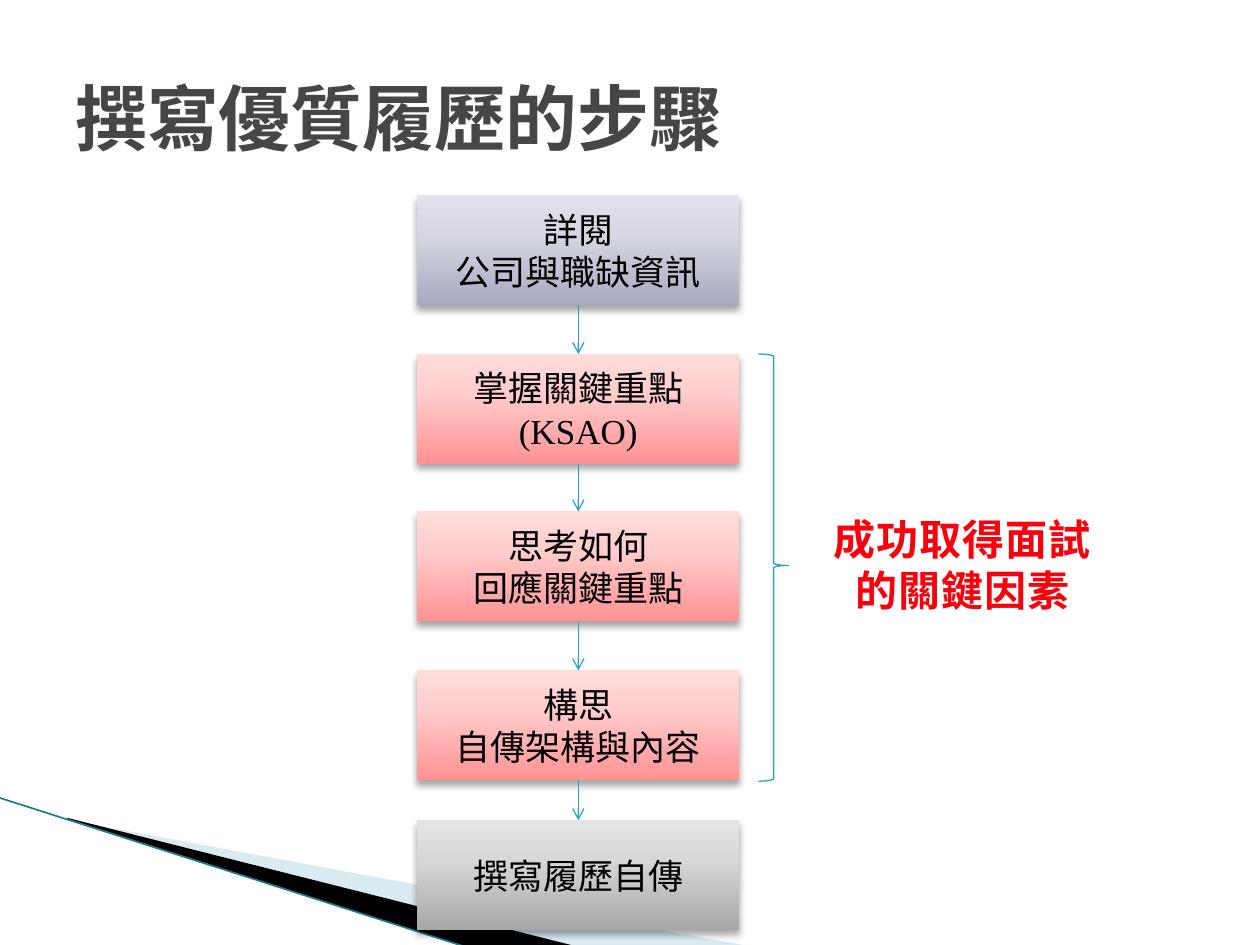
from copy import deepcopy

from pptx import Presentation
from pptx.dml.color import RGBColor
from pptx.enum.shapes import MSO_CONNECTOR as Connector, MSO_SHAPE as Shape
from pptx.enum.text import MSO_ANCHOR as Anchor, PP_ALIGN as Align
from pptx.oxml.ns import qn
from pptx.util import Inches, Pt
from lxml.etree import SubElement

COLORS = {
    "title": "464646", "text": "000000", "key": "F9000C", "line": "2DA2BF",
    "wedge": "A0CBDC", "band": "000000", "edge": "1F7A90",
}
GRADIENTS = {
    "violet": ("A8AAC0", "D6D7E3", "E2E2EC"),
    "red": ("FF9294", "FFCDCD", "FFDCDC"),
    "gray": ("A7A7A7", "D8D8D8", "E4E4E4"),
}
STOPS = (0, 0.65, 1)
SANS, SERIF = "Noto Sans CJK SC", "Times New Roman"

STEP_LEFT, STEP_WIDTH, STEP_HEIGHT = 3.31, 2.56, 0.87
STEPS = [
    (1.55, "violet", SANS, ["詳閱", "公司與職缺資訊"]),
    (2.81, "red", SERIF, ["掌握關鍵重點", "(KSAO)"]),
    (4.06, "red", SANS, ["思考如何", "回應關鍵重點"]),
    (5.32, "red", SANS, ["構思", "自傳架構與內容"]),
    (6.51, "gray", SANS, ["撰寫履歷自傳"]),
]


def rgb(name):
    return RGBColor.from_string(COLORS[name])


def write(frame, lines, size, color, font=SANS, bold=False, align=Align.CENTER, spacing=0):
    for index, line in enumerate(lines):
        para = frame.paragraphs[0] if index == 0 else frame.add_paragraph()
        para.alignment = align
        para.line_spacing = Pt(round(size * 1.21, 1))
        span = para.add_run()
        span.text = line
        span.font.size = Pt(size)
        span.font.bold = bold
        span.font.color.rgb = rgb(color)
        span.font.name = font
        props = span.font._element
        SubElement(props, qn("a:ea")).set("typeface", SANS)
        if spacing:
            props.set("spc", str(int(spacing * 100)))


def add_text(page, left, top, width, height, *args, **kwargs):
    box = page.shapes.add_textbox(Inches(left), Inches(top), Inches(width), Inches(height))
    box.text_frame.word_wrap = True
    box.text_frame.vertical_anchor = Anchor.MIDDLE
    write(box.text_frame, *args, **kwargs)


def add_polygon(page, points, color, opacity=100):
    corners = [(Inches(x), Inches(y)) for x, y in points]
    builder = page.shapes.build_freeform(*corners[0], scale=1.0)
    builder.add_line_segments(corners[1:], close=True)
    shape = builder.convert_to_shape()
    shape.shadow.inherit = False
    shape.fill.solid()
    shape.fill.fore_color.rgb = rgb(color)
    shape.line.fill.background()
    if opacity < 100:
        tint = shape._element.spPr.find(".//" + qn("a:srgbClr"))
        SubElement(tint, qn("a:alpha")).set("val", str(opacity * 1000))


def add_line(page, start, end, color, width, arrow=False):
    line = page.shapes.add_connector(
        Connector.STRAIGHT, *(Inches(value) for value in (*start, *end)))
    line.line.color.rgb = rgb(color)
    line.line.width = Pt(width)
    if arrow:
        SubElement(line.line._get_or_add_ln(), qn("a:tailEnd")).set("type", "arrow")
    SubElement(line._element.spPr, qn("a:effectLst"))


def fill_gradient(shape, colors):
    shape.fill.gradient()
    shape.fill.gradient_angle = 90
    stop_list = shape._element.spPr.find(".//" + qn("a:gsLst"))
    stop_list.append(deepcopy(stop_list[-1]))
    for stop, position, color in zip(shape.fill.gradient_stops, STOPS, colors):
        stop.position = position
        stop.color.rgb = RGBColor.from_string(color)


def add_shadow(shape):
    shape.shadow.inherit = False
    effects = shape._element.spPr.find(qn("a:effectLst"))
    shadow = SubElement(effects, qn("a:outerShdw"), blurRad=str(Pt(4)),
                        dist=str(Pt(3)), dir="5400000", rotWithShape="0")
    tint = SubElement(shadow, qn("a:srgbClr"), val=COLORS["text"])
    SubElement(tint, qn("a:alpha"), val="35000")


def add_step(page, top, gradient, font, lines):
    box = page.shapes.add_shape(Shape.RECTANGLE, Inches(STEP_LEFT), Inches(top),
                                Inches(STEP_WIDTH), Inches(STEP_HEIGHT))
    fill_gradient(box, GRADIENTS[gradient])
    box.line.fill.background()
    add_shadow(box)
    box.text_frame.word_wrap = False
    box.text_frame.vertical_anchor = Anchor.MIDDLE
    write(box.text_frame, lines, 20, "text", font)


def add_brace(page, left, top, width, height):
    brace = page.shapes.add_shape(Shape.RIGHT_BRACE, Inches(left), Inches(top),
                                  Inches(width), Inches(height))
    brace.adjustments[0], brace.adjustments[1] = 0.083, 0.495
    brace.shadow.inherit = False
    brace.fill.background()
    brace.line.color.rgb = rgb("line")
    brace.line.width = Pt(0.75)


def main():
    deck = Presentation()
    deck.slide_width, deck.slide_height = Inches(10), Inches(7.5)
    page = deck.slides.add_slide(deck.slide_layouts[6])

    # Corner decoration
    add_polygon(page, [(0.55, 6.51), (5.95, 7.51), (4.56, 7.51), (0.55, 6.5)], "wedge", 40)
    add_polygon(page, [(0.53, 6.49), (4.57, 7.51), (3.72, 7.52), (0.54, 6.5)], "band")
    add_line(page, (-0.01, 6.33), (3.71, 7.52), "edge", 0.95)

    # Title
    add_text(page, 0.5, 0.3, 9, 1.25, ["撰寫優質履歷的步驟"], 41, "title",
             bold=True, align=Align.LEFT)

    # Steps, joined by arrows
    for step in STEPS:
        add_step(page, *step)
    center = STEP_LEFT + STEP_WIDTH / 2
    for upper, lower in zip(STEPS, STEPS[1:]):
        add_line(page, (center, upper[0] + STEP_HEIGHT), (center, lower[0]),
                 "line", 0.75, arrow=True)

    # Key factor beside the three middle steps
    add_text(page, 6.42, 4.02, 2.44, 0.91, ["成功取得面試的關鍵因素"], 24, "key",
             bold=True, spacing=0.5)
    add_brace(page, 6.02, 2.81, 0.24, 3.39)

    deck.save("out.pptx")


if __name__ == "__main__":
    main()
